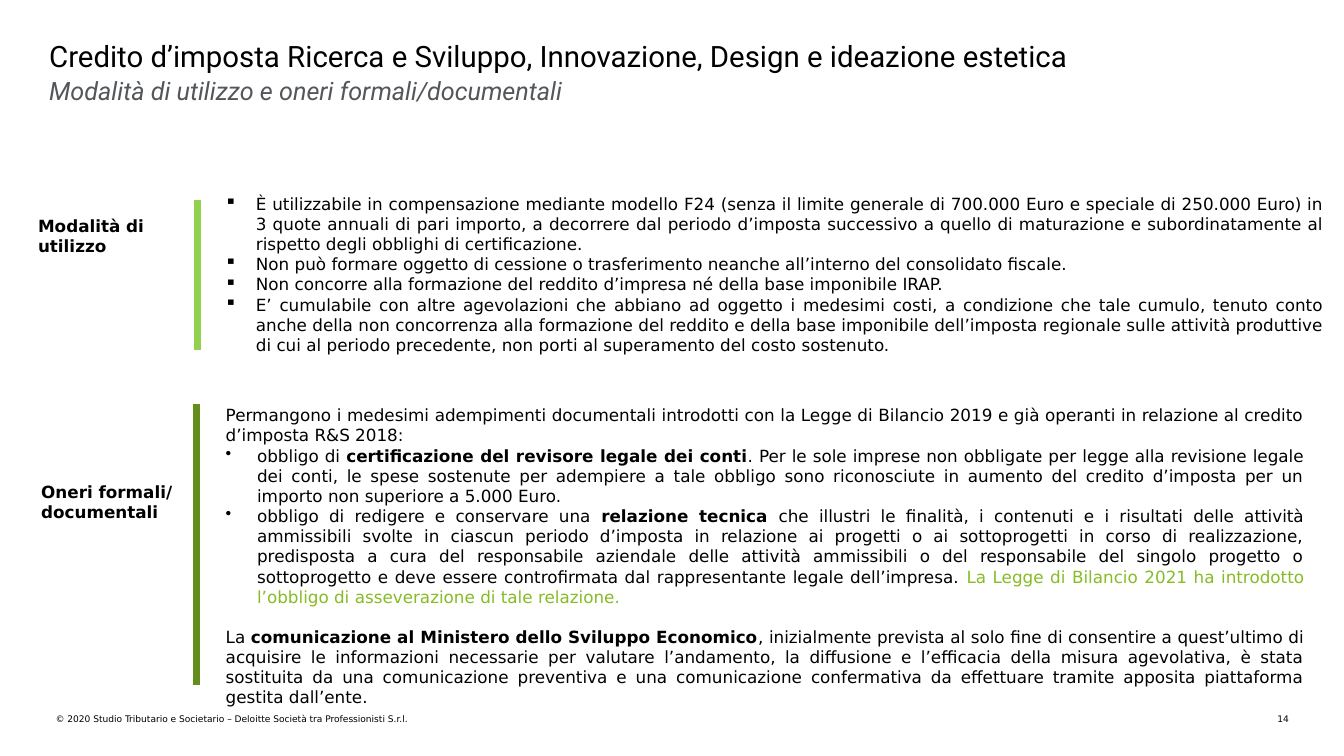
from dataclasses import dataclass

from lxml import etree
from pptx import Presentation
from pptx.dml.color import RGBColor
from pptx.enum.shapes import MSO_CONNECTOR
from pptx.enum.text import MSO_AUTO_SIZE, PP_ALIGN
from pptx.oxml.ns import qn
from pptx.util import Cm, Pt

LEFT, RIGHT, JUSTIFY = PP_ALIGN.LEFT, PP_ALIGN.RIGHT, PP_ALIGN.JUSTIFY
STRAIGHT = MSO_CONNECTOR.STRAIGHT
GROW, FIXED = MSO_AUTO_SIZE.SHAPE_TO_FIT_TEXT, MSO_AUTO_SIZE.NONE


@dataclass(frozen=True)
class Theme:
    black: str = "000000"
    grey: str = "53565A"
    highlight: str = "86BC25"
    light_green: str = "92D050"
    dark_green: str = "658D1C"
    heading_font: str = "Roboto"
    body_font: str = "DejaVu Sans"
    title_size: float = 21
    subtitle_size: float = 18
    body_size: float = 12
    footer_size: float = 6.5
    rule_width: float = 4.5
    indent: float = 0.79


THEME = Theme()
BODY = dict(name=THEME.body_font, size=THEME.body_size, color=THEME.black)
BOLD = dict(BODY, bold=True)
HIGHLIGHT = dict(BODY, color=THEME.highlight)
FOOTER = dict(BODY, size=THEME.footer_size)
TITLE = dict(name=THEME.heading_font, size=THEME.title_size, color=THEME.black)
SUBTITLE = dict(TITLE, size=THEME.subtitle_size, color=THEME.grey, italic=True)

USAGE = [
    "È utilizzabile in compensazione mediante modello F24 (senza il limite generale di 700.000 Euro e "
    "speciale di 250.000 Euro) in 3 quote annuali di pari importo, a decorrere dal periodo d’imposta "
    "successivo a quello di maturazione e subordinatamente al rispetto degli obblighi di certificazione.",
    "Non può formare oggetto di cessione o trasferimento neanche all’interno del consolidato fiscale.",
    "Non concorre alla formazione del reddito d’impresa né della base imponibile IRAP.",
    "E’ cumulabile con altre agevolazioni che abbiano ad oggetto i medesimi costi, a condizione che tale "
    "cumulo, tenuto conto anche della non concorrenza alla formazione del reddito e della base imponibile "
    "dell’imposta regionale sulle attività produttive di cui al periodo precedente, non porti al "
    "superamento del costo sostenuto.",
]
DUTIES_INTRO = [
    ("Permangono i medesimi adempimenti documentali introdotti con la Legge di Bilancio 2019 e già "
     "operanti in relazione al credito d’imposta R&S 2018:", BODY),
]
CERTIFICATION = [
    ("obbligo di ", BODY),
    ("certificazione del revisore legale dei conti", BOLD),
    (". Per le sole imprese non obbligate per legge alla revisione legale dei conti, le spese sostenute "
     "per adempiere a tale obbligo sono riconosciute in aumento del credito d’imposta per un importo non "
     "superiore a 5.000 Euro.", BODY),
]
REPORT = [
    ("obbligo di redigere e conservare una ", BODY),
    ("relazione tecnica ", BOLD),
    ("che illustri le finalità, i contenuti e i risultati delle attività ammissibili svolte in ciascun "
     "periodo d’imposta in relazione ai progetti o ai sottoprogetti in corso di realizzazione, predisposta "
     "a cura del responsabile aziendale delle attività ammissibili o del responsabile del singolo progetto "
     "o sottoprogetto e deve essere controfirmata dal rappresentante legale dell’impresa. ", BODY),
    ("La Legge di Bilancio 2021 ha introdotto l’obbligo di asseverazione di tale relazione.", HIGHLIGHT),
]
COMMUNICATION = [
    ("La ", BODY),
    ("comunicazione al Ministero dello Sviluppo Economico", BOLD),
    (", inizialmente prevista al solo fine di consentire a quest’ultimo di acquisire le informazioni "
     "necessarie per valutare l’andamento, la diffusione e l’efficacia della misura agevolativa, è stata "
     "sostituita da una comunicazione preventiva e una comunicazione confermativa da effettuare tramite "
     "apposita piattaforma gestita dall’ente.", BODY),
]


def format_font(font, style):
    for key, value in style.items():
        if key == "color":
            font.color.rgb = RGBColor.from_string(value)
        else:
            setattr(font, key, Pt(value) if key == "size" else value)


def add_bullet(para, symbol):
    """Give the paragraph a hanging indent and a bullet symbol."""
    properties = para._p.get_or_add_pPr()
    properties.set("marL", str(Cm(THEME.indent)))
    properties.set("indent", str(-Cm(THEME.indent)))
    etree.SubElement(properties, qn("a:buChar")).set("char", symbol)


def add_para(frame, spans, align=JUSTIFY, bullet=None, before=0):
    """Fill the frame's empty first paragraph, or append a new one."""
    first = frame.paragraphs[0]
    para = frame.add_paragraph() if first.runs else first
    para.alignment = align
    if before:
        para.space_before = Pt(before)
    if bullet:
        add_bullet(para, bullet)
    for text, style in spans:
        span = para.add_run()
        span.text = text
        format_font(span.font, style)


def add_box(page, area, padded=True, auto_size=GROW):
    """Add a text box at (left, top, width, height) in cm and return its text frame."""
    frame = page.shapes.add_textbox(*map(Cm, area)).text_frame
    frame.word_wrap = True
    frame.auto_size = auto_size
    if not padded:
        for side in ("left", "top", "right", "bottom"):
            setattr(frame, f"margin_{side}", 0)
    return frame


def add_line_text(page, area, text, style, align=LEFT, auto_size=FIXED):
    add_para(add_box(page, area, False, auto_size), [(text, style)], align)


def add_label(page, area, lines):
    frame = add_box(page, area)
    for line in lines:
        add_para(frame, [(line, BOLD)], LEFT)


def add_rule(page, left, top, bottom, color):
    rule = page.shapes.add_connector(STRAIGHT, Cm(left), Cm(top), Cm(left), Cm(bottom))
    rule.line.color.rgb = RGBColor.from_string(color)
    rule.line.width = Pt(THEME.rule_width)
    etree.SubElement(rule._element.spPr, qn("a:effectLst"))


def add_usage(page):
    add_label(page, (0.71, 5.31, 4.27, 1.27), ["Modalità di utilizzo"])
    frame = add_box(page, (5.41, 4.75, 28.22, 4.37))
    for text in USAGE:
        add_para(frame, [(text, BODY)], bullet="▪")
    add_rule(page, 4.98, 5.03, 8.81, THEME.light_green)


def add_duties(page):
    frame = add_box(page, (5.44, 10.08, 27.69, 7.95))
    add_para(frame, DUTIES_INTRO)
    for spans in (CERTIFICATION, REPORT):
        add_para(frame, spans, bullet="•")
    add_para(frame, COMMUNICATION, before=14.4)
    add_label(page, (0.79, 12.01, 4.22, 1.27), ["Oneri formali/", "documentali"])
    add_rule(page, 4.95, 10.19, 17.27, THEME.dark_green)


def main():
    deck = Presentation()
    deck.slide_width, deck.slide_height = Cm(33.87), Cm(19.05)
    page = deck.slides.add_slide(deck.slide_layouts[6])
    add_line_text(page, (31.62, 17.98, 0.86, 0.28), "14", FOOTER, RIGHT, GROW)
    add_line_text(page, (1.4, 17.98, 14.88, 0.28),
                  "© 2020 Studio Tributario e Societario – Deloitte Società tra Professionisti S.r.l.",
                  FOOTER, auto_size=GROW)
    add_usage(page)
    add_duties(page)
    add_line_text(page, (1.24, 1.91, 31.39, 2.11),
                  "Modalità di utilizzo e oneri formali/documentali", SUBTITLE)
    add_line_text(page, (1.24, 0.97, 31.39, 0.94),
                  "Credito d’imposta Ricerca e Sviluppo, Innovazione, Design e ideazione estetica", TITLE)
    deck.save("out.pptx")


if __name__ == "__main__":
    main()
